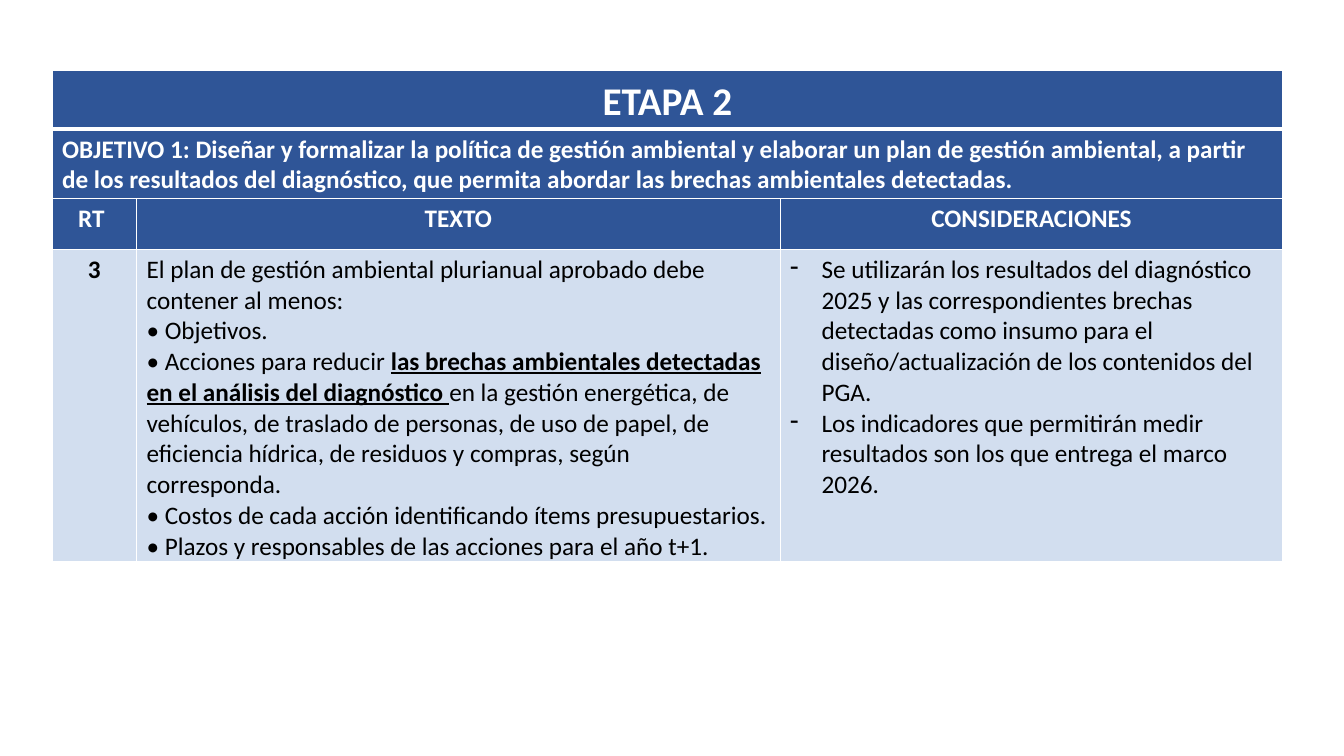
from pptx import Presentation
from pptx.dml.color import RGBColor as RGB
from pptx.enum.text import MSO_ANCHOR as Anchor, PP_ALIGN as Align
from pptx.oxml.ns import qn
from pptx.util import Cm, Pt
from lxml.etree import SubElement as Sub

BLUE = RGB(0x2F, 0x55, 0x97)
PALE = RGB(0xD2, 0xDE, 0xEF)
WHITE = RGB(0xFF, 0xFF, 0xFF)
BLACK = RGB(0, 0, 0)

WIDTHS = [2.13, 16.22, 12.67]
HEIGHTS = [1.47, 1.76, 1.27, 7.88]

GOAL = ("OBJETIVO 1: Diseñar y formalizar la política de gestión ambiental y "
        "elaborar un plan de gestión ambiental, a partir de los resultados del "
        "diagnóstico, que permita abordar las brechas ambientales detectadas.")
GAPS = "las brechas ambientales detectadas en el análisis del diagnóstico "
PLAN = [
    ["El plan de gestión ambiental plurianual aprobado debe contener al menos:"],
    ["• Objetivos."],
    ["• Acciones para reducir ", GAPS,
     "en la gestión energética, de vehículos, de traslado de personas, de uso de "
     "papel, de eficiencia hídrica, de residuos y compras, según corresponda."],
    ["• Costos de cada acción identificando ítems presupuestarios."],
    ["• Plazos y responsables de las acciones para el año t+1."],
]
NOTES = [
    ["Se utilizarán los resultados del diagnóstico 2025 y las correspondientes "
     "brechas detectadas como insumo para el diseño/actualización de los "
     "contenidos del PGA."],
    ["Los indicadores que permitirán medir resultados son los que entrega el "
     "marco 2026."],
]


def add_edges(cell, base):
    props = cell._tc.get_or_add_tcPr()
    for side, width in zip("LRTB", [1, 1, 1, base]):
        line = Sub(props, qn(f"a:ln{side}"), w=str(Pt(width)))
        fill = Sub(line, qn("a:solidFill"))
        Sub(fill, qn("a:srgbClr"), val=str(WHITE))


def add_dash(para):
    props = para._p.get_or_add_pPr()
    props.set("marL", str(Cm(0.79)))
    props.set("indent", str(-Cm(0.79)))
    Sub(props, qn("a:buFontTx"))
    Sub(props, qn("a:buChar"), char="-")


def style_cell(cell, fill, base=1):
    add_edges(cell, base)
    cell.fill.solid()
    cell.fill.fore_color.rgb = fill
    cell.margin_bottom = 0


def write_cell(cell, paras, color, size=18, bold=True, align=Align.LEFT, dash=False):
    frame = cell.text_frame
    for i, parts in enumerate(paras):
        para = frame.add_paragraph() if i else frame.paragraphs[0]
        para.alignment = align
        if dash:
            add_dash(para)
        for part in parts:
            run = para.add_run()
            run.text = part
            font = run.font
            font.name = "Calibri"
            font.size = Pt(size)
            font.color.rgb = color
            font.bold = bold or part == GAPS
            font.underline = part == GAPS


def add_grid(slide):
    grid = slide.shapes.add_table(
        len(HEIGHTS), len(WIDTHS), Cm(1.31), Cm(1.78),
        Cm(sum(WIDTHS)), Cm(sum(HEIGHTS))).table
    for col, width in zip(grid.columns, WIDTHS):
        col.width = Cm(width)
    for row, height in zip(grid.rows, HEIGHTS):
        row.height = Cm(height)
    for r in range(len(HEIGHTS)):
        for c in range(len(WIDTHS)):
            style_cell(grid.cell(r, c), PALE if r == 3 else BLUE, 1 if r else 3)
    for r in range(2):
        grid.cell(r, 0).merge(grid.cell(r, 2))
    return grid


def main():
    deck = Presentation()
    deck.slide_width, deck.slide_height = Cm(33.87), Cm(19.05)
    grid = add_grid(deck.slides.add_slide(deck.slide_layouts[6]))

    title = grid.cell(0, 0)
    title.vertical_anchor = Anchor.MIDDLE
    write_cell(title, [["ETAPA 2"]], WHITE, size=28, align=Align.CENTER)
    write_cell(grid.cell(1, 0), [[GOAL]], WHITE)
    for c, head in enumerate(["RT ", "TEXTO", "CONSIDERACIONES"]):
        write_cell(grid.cell(2, c), [[head]], WHITE, align=Align.CENTER)
    write_cell(grid.cell(3, 0), [["3"]], BLACK, align=Align.CENTER)
    write_cell(grid.cell(3, 1), PLAN, BLACK, bold=False)
    write_cell(grid.cell(3, 2), NOTES, BLACK, bold=False, dash=True)
    deck.save("out.pptx")


if __name__ == "__main__":
    main()
